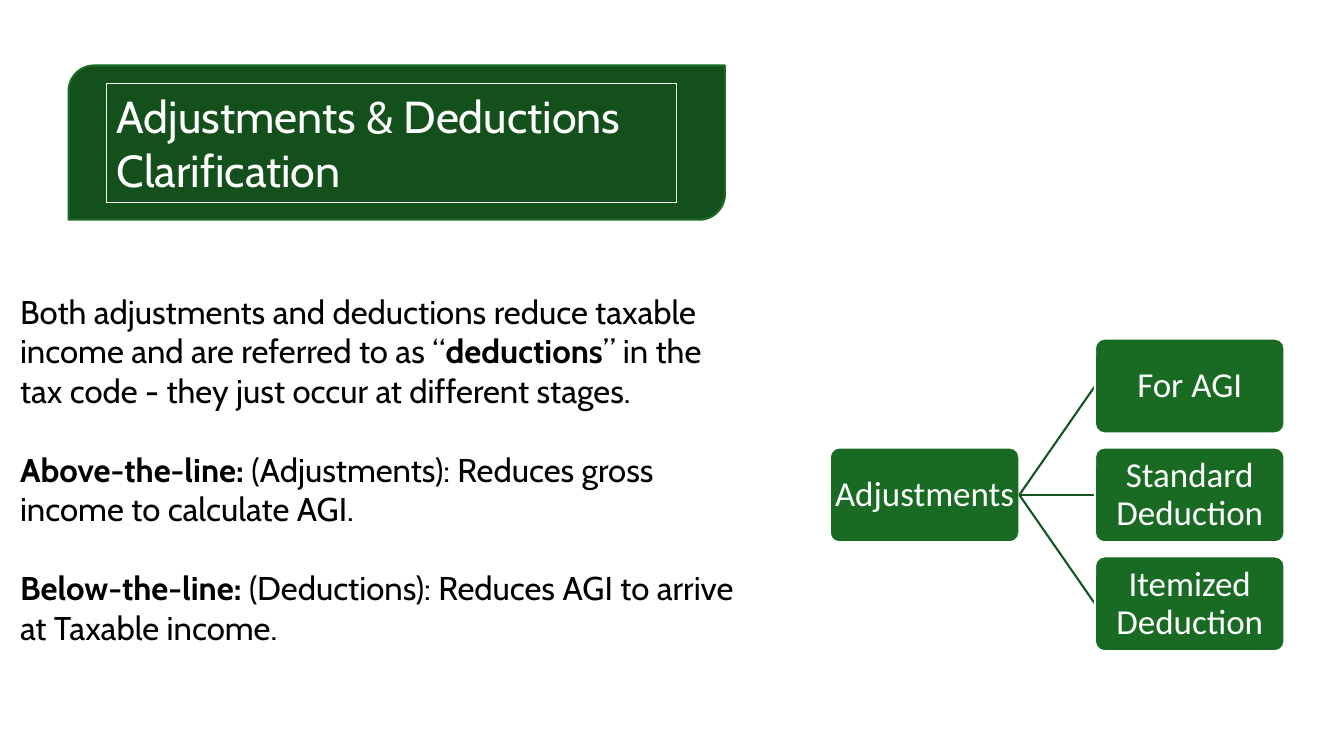
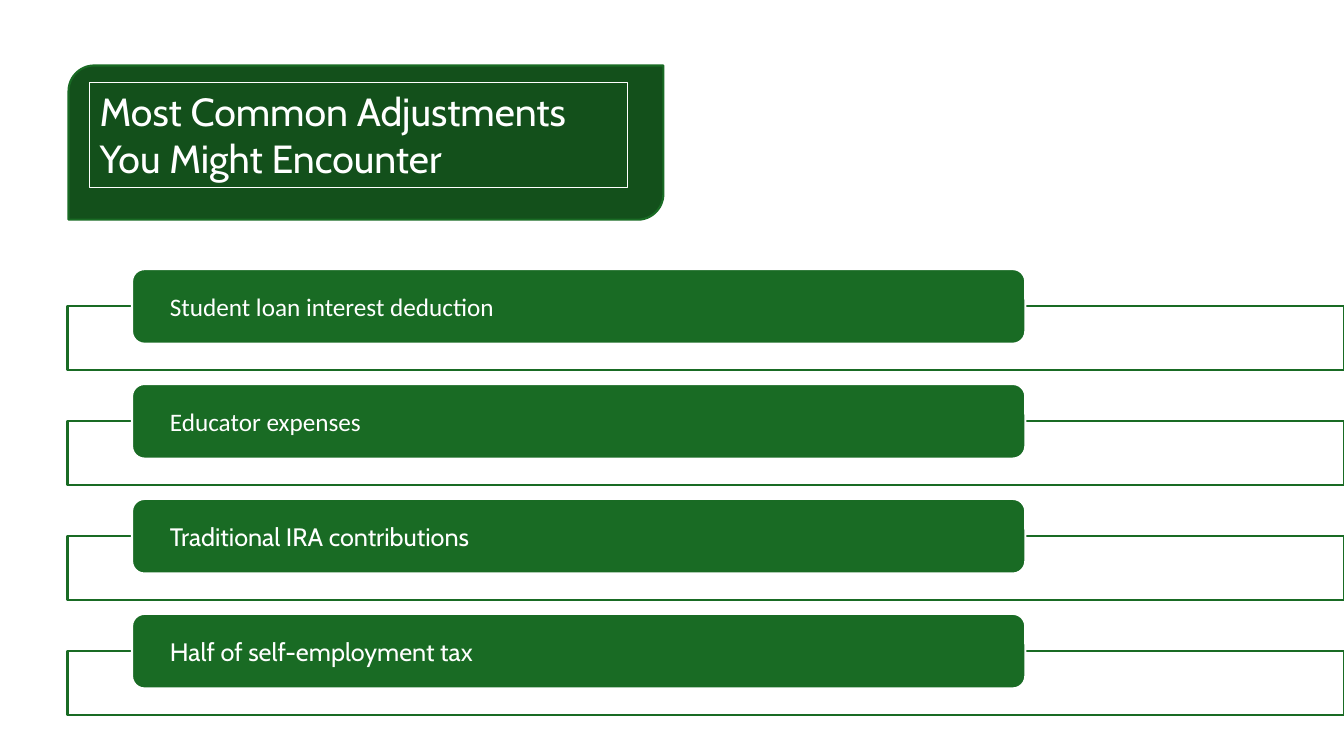
from dataclasses import dataclass

from lxml import etree
from pptx import Presentation
from pptx.dml import color
from pptx.enum import shapes, text
from pptx.oxml import ns
from pptx.util import Inches, Pt


@dataclass(frozen=True)
class Theme:
    band: str = "13501B"
    green: str = "196B24"
    link: str = "14561D"
    white: str = "FFFFFF"
    black: str = "000000"
    heading_font: str = "Cabin"
    diagram_font: str = "Calibri"
    title_size: float = 32
    long_title_size: float = 28
    body_size: float = 23.5
    body_gap: float = 28.2
    node_size: float = 25
    row_size: float = 18
    line_width: float = 1.5
    frame_width: float = 0.75


THEME = Theme()
SHAPE = shapes.MSO_SHAPE


def rgb(value):
    return color.RGBColor.from_string(value)


def write_text(shape, paragraphs, *, size, font, text_color=THEME.white,
               align=text.PP_ALIGN.LEFT, anchor=text.MSO_ANCHOR.TOP,
               margins=(0.1, 0.05), spacing=None, gap=0):
    frame = shape.text_frame
    frame.word_wrap = True
    frame.vertical_anchor = anchor
    frame.margin_left = frame.margin_right = Inches(margins[0])
    frame.margin_top = frame.margin_bottom = Inches(margins[1])
    for index, runs in enumerate(paragraphs):
        paragraph = frame.add_paragraph() if index else frame.paragraphs[0]
        paragraph.alignment = align
        if spacing:
            paragraph.line_spacing = spacing
        if index and gap:
            paragraph.space_before = Pt(gap)
        for content, bold in [(runs, False)] if isinstance(runs, str) else runs:
            run = paragraph.add_run()
            run.text = content
            run.font.name = font
            run.font.size = Pt(size)
            run.font.bold = bold
            run.font.color.rgb = rgb(text_color)


def add_box(slide, kind, left, top, width, height, *, fill=None,
            line=THEME.white, line_width=THEME.line_width):
    shape = slide.shapes.add_shape(
        kind, Inches(left), Inches(top), Inches(width), Inches(height))
    shape.shadow.inherit = False
    if fill:
        shape.fill.solid()
        shape.fill.fore_color.rgb = rgb(fill)
    else:
        shape.fill.background()
    shape.line.color.rgb = rgb(line)
    shape.line.width = Pt(line_width)
    return shape


def add_title(slide, lines, *, band_width, frame, size):
    add_box(slide, SHAPE.ROUND_2_DIAG_RECTANGLE, 0.68, 0.65, band_width, 1.53,
            fill=THEME.band, line=THEME.green)
    title = add_box(slide, SHAPE.RECTANGLE, *frame, line_width=THEME.frame_width)
    write_text(title, lines, size=size, font=THEME.heading_font)


def add_link(slide, start, end):
    connector = slide.shapes.add_connector(
        shapes.MSO_CONNECTOR.STRAIGHT, *map(Inches, start + end))
    connector.line.color.rgb = rgb(THEME.link)
    connector.line.width = Pt(THEME.line_width)
    etree.SubElement(connector.element.spPr, ns.qn("a:effectLst"))


def add_node(slide, label, left, top, width, height):
    node = add_box(slide, SHAPE.ROUNDED_RECTANGLE, left, top, width, height,
                   fill=THEME.green)
    node.adjustments[0] = 0.1
    write_text(node, [label], size=THEME.node_size, font=THEME.diagram_font,
               align=text.PP_ALIGN.CENTER, anchor=text.MSO_ANCHOR.MIDDLE,
               margins=(0.02, 0.02), spacing=0.9)


def add_tree(slide, root, branches):
    root_left, branch_left, top = 8.23, 10.86, 3.36
    width, height, pitch = 1.88, 0.94, 1.08
    root_top = top + pitch * (len(branches) - 1) / 2
    start = (root_left + width, root_top + height / 2)
    add_node(slide, root, root_left, root_top, width, height)
    for index, label in enumerate(branches):
        branch_top = top + index * pitch
        add_link(slide, start, (branch_left, branch_top + height / 2))
        add_node(slide, label, branch_left, branch_top, width, height)


def add_row(slide, label, font, top):
    add_box(slide, SHAPE.RECTANGLE, 0.67, top + 0.37, 12.66, 0.63,
            fill=THEME.white, line=THEME.green)
    bar = add_box(slide, SHAPE.ROUNDED_RECTANGLE, 1.31, top, 8.86, 0.74,
                  fill=THEME.green)
    write_text(bar, [label], size=THEME.row_size, font=font,
               anchor=text.MSO_ANCHOR.MIDDLE, margins=(0.34, 0))


def build_clarification(slide):
    add_title(slide, ["Adjustments & Deductions", "Clarification"],
              band_width=6.51, frame=(1.06, 0.83, 5.65, 1.18),
              size=THEME.title_size)
    add_tree(slide, "Adjustments",
             ["For AGI", "Standard Deduction", "Itemized Deduction"])
    body = slide.shapes.add_textbox(
        Inches(0.1), Inches(2.84), Inches(7.35), Inches(4.06))
    write_text(body, [
        [("Both adjustments and deductions reduce taxable income "
          "and are referred to as “", False),
         ("deductions", True),
         ("” in the tax code - they just occur at different stages.", False)],
        [("Above-the-line:", True),
         (" (Adjustments): Reduces gross income to calculate AGI.", False)],
        [("Below-the-line: ", True),
         ("(Deductions): Reduces AGI to arrive at Taxable income.", False)],
    ], size=THEME.body_size, font=THEME.heading_font,
        text_color=THEME.black, gap=THEME.body_gap)


def build_common_adjustments(slide):
    rows = [
        ("Student loan interest deduction", THEME.diagram_font),
        ("Educator expenses", THEME.diagram_font),
        ("Traditional IRA contributions", THEME.heading_font),
        ("Half of self-employment tax", THEME.heading_font),
    ]
    for index, (label, font) in enumerate(rows):
        add_row(slide, label, font, 2.67 + index * 1.14)
    add_title(slide, ["Most Common Adjustments You Might Encounter"],
              band_width=5.9, frame=(0.89, 0.82, 5.33, 1.04),
              size=THEME.long_title_size)


def main():
    presentation = Presentation()
    presentation.slide_width = Inches(13.33)
    presentation.slide_height = Inches(7.5)
    for build in (build_clarification, build_common_adjustments):
        build(presentation.slides.add_slide(presentation.slide_layouts[6]))
    presentation.save("out.pptx")


if __name__ == "__main__":
    main()
